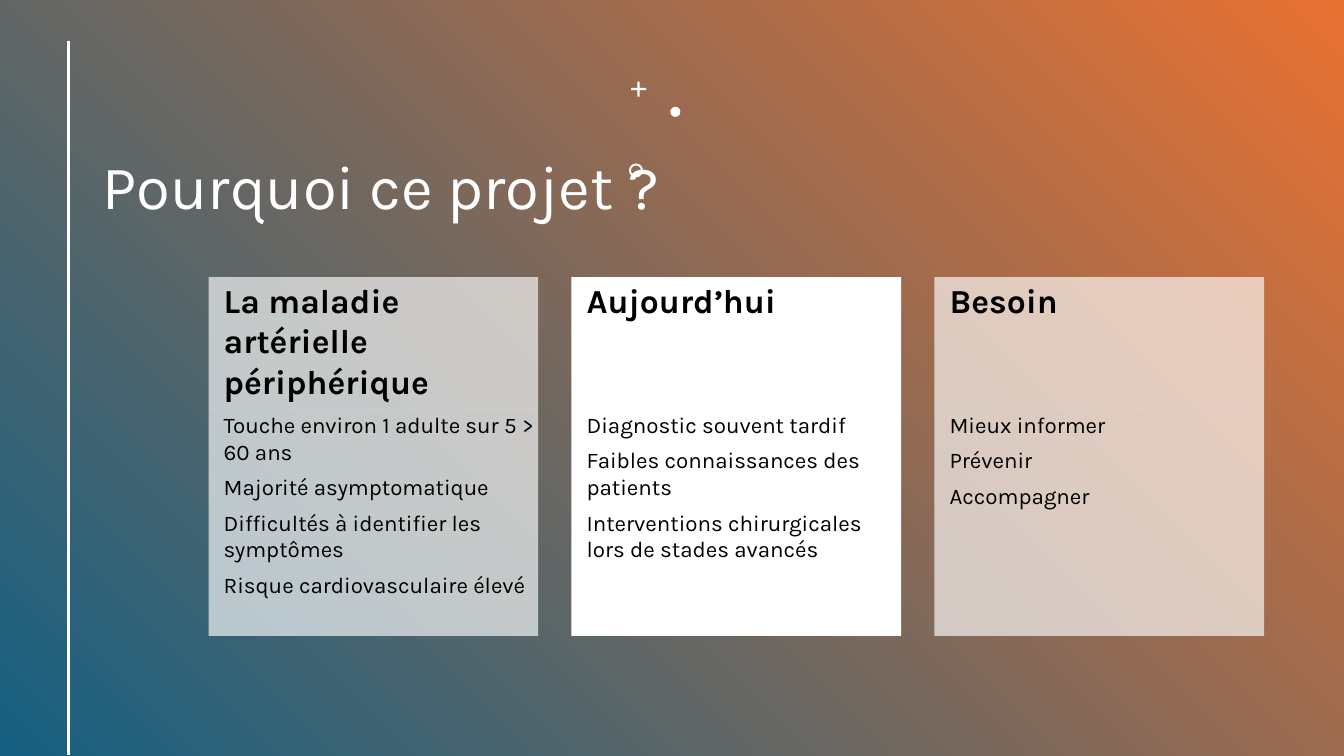
from lxml.etree import SubElement
from pptx import Presentation
from pptx.dml.color import RGBColor
from pptx.enum.shapes import MSO_CONNECTOR, MSO_SHAPE
from pptx.enum.text import MSO_ANCHOR, MSO_AUTO_SIZE, PP_ALIGN
from pptx.oxml.ns import qn
from pptx.util import Pt

WHITE = RGBColor(0xFF, 0xFF, 0xFF)
BLACK = RGBColor(0x00, 0x00, 0x00)
BLUE = RGBColor(0x15, 0x60, 0x82)
ORANGE = RGBColor(0xE9, 0x71, 0x32)
FONT = "Karla"

SLIDE_WIDTH, SLIDE_HEIGHT = 960, 540
CARD_LEFT, CARD_TOP, CARD_WIDTH, CARD_STEP = 149, 198, 235.5, 259.25
HEADING_HEIGHT, LIST_HEIGHT = 94.25, 162

CARDS = [
    ("La maladie artérielle périphérique", 65, [
        "Touche environ 1 adulte sur 5 > 60 ans",
        "Majorité asymptomatique",
        "Difficultés à identifier les symptômes",
        "Risque cardiovasculaire élevé",
    ]),
    ("Aujourd’hui", 100, [
        "Diagnostic souvent tardif",
        "Faibles connaissances des patients",
        "Interventions chirurgicales lors de stades avancés",
    ]),
    ("Besoin", 65, ["Mieux informer", "Prévenir", "Accompagner"]),
]


def write_text(shape, lines, *, size, color=BLACK, bold=False, anchor=MSO_ANCHOR.TOP,
               margins=(7.2, 3.6, 7.2, 3.6), line_spacing=1.0, space_after=0):
    """Fill a shape with left-aligned paragraphs in one format."""
    frame = shape.text_frame
    frame.word_wrap = True
    frame.auto_size = MSO_AUTO_SIZE.NONE
    frame.vertical_anchor = anchor
    (frame.margin_left, frame.margin_top,
     frame.margin_right, frame.margin_bottom) = map(Pt, margins)
    frame.text = "\n".join(lines)
    for paragraph in frame.paragraphs:
        paragraph.alignment = PP_ALIGN.LEFT
        paragraph.line_spacing = line_spacing
        paragraph.space_before = Pt(0)
        paragraph.space_after = Pt(space_after)
        font = paragraph.runs[0].font
        font.name, font.size, font.bold = FONT, Pt(size), bold
        font.color.rgb = color


def add_plain_shape(slide, kind, left, top, width, height, opacity=100):
    """Add a white shape without outline or shadow."""
    shape = slide.shapes.add_shape(kind, Pt(left), Pt(top), Pt(width), Pt(height))
    shape.shadow.inherit = False
    shape.line.fill.background()
    shape.fill.solid()
    shape.fill.fore_color.rgb = WHITE
    if opacity < 100:
        color = shape._element.spPr.find(qn("a:solidFill")).find(qn("a:srgbClr"))
        SubElement(color, qn("a:alpha")).set("val", str(opacity * 1000))
    return shape


def add_backdrop(slide):
    """Cover the slide with a diagonal gradient."""
    backdrop = add_plain_shape(slide, MSO_SHAPE.RECTANGLE, 0, 0, SLIDE_WIDTH, SLIDE_HEIGHT)
    backdrop.fill.gradient()
    backdrop.fill.gradient_angle = 45
    for stop, color in zip(backdrop.fill.gradient_stops, (BLUE, ORANGE)):
        stop.color.rgb = color


def add_title(slide, text):
    """Place the title placeholder in front of the backdrop."""
    title = slide.shapes.title
    title.left, title.top, title.width, title.height = map(Pt, (66.25, 97.25, 419.75, 65.5))
    write_text(title, [text], size=44, color=WHITE, anchor=MSO_ANCHOR.BOTTOM,
               line_spacing=0.9)
    slide.shapes._spTree.append(title._element)


def add_side_line(slide):
    """Draw the vertical line at the left edge."""
    line = slide.shapes.add_connector(MSO_CONNECTOR.STRAIGHT, Pt(49), Pt(29), Pt(49), Pt(539.5))
    line.line.color.rgb = WHITE
    line.line.width = Pt(2)
    SubElement(line._element.spPr, qn("a:effectLst"))


def add_ornaments(slide):
    """Add the small plus, dot and ring."""
    plus = add_plain_shape(slide, MSO_SHAPE.CROSS, 450.75, 58.25, 10.75, 10.75)
    plus.adjustments[0] = 0.43
    add_plain_shape(slide, MSO_SHAPE.OVAL, 478.8, 76.3, 7.2, 7.2)
    ring = add_plain_shape(slide, MSO_SHAPE.DONUT, 449.25, 116.75, 10, 10)
    ring.adjustments[0] = 0.14


def add_card(slide, left, heading, opacity, items):
    """Add a heading box with its list box below."""
    heading_box = add_plain_shape(slide, MSO_SHAPE.RECTANGLE, left, CARD_TOP,
                                  CARD_WIDTH, HEADING_HEIGHT, opacity)
    write_text(heading_box, [heading], size=24, bold=True, margins=(10.8, 2, 2, 2))
    list_box = add_plain_shape(slide, MSO_SHAPE.RECTANGLE, left, CARD_TOP + HEADING_HEIGHT,
                               CARD_WIDTH, LIST_HEIGHT, opacity)
    write_text(list_box, items, size=16, margins=(10.8, 1.5, 1.5, 1.5), space_after=6)


def main():
    """Build the slide and save it."""
    presentation = Presentation()
    presentation.slide_width, presentation.slide_height = Pt(SLIDE_WIDTH), Pt(SLIDE_HEIGHT)
    slide = presentation.slides.add_slide(presentation.slide_layouts.get_by_name("Title Only"))
    add_backdrop(slide)
    add_title(slide, "Pourquoi ce projet ?")
    add_side_line(slide)
    add_ornaments(slide)
    for index, (heading, opacity, items) in enumerate(CARDS):
        add_card(slide, CARD_LEFT + index * CARD_STEP, heading, opacity, items)
    presentation.save("out.pptx")


if __name__ == "__main__":
    main()
